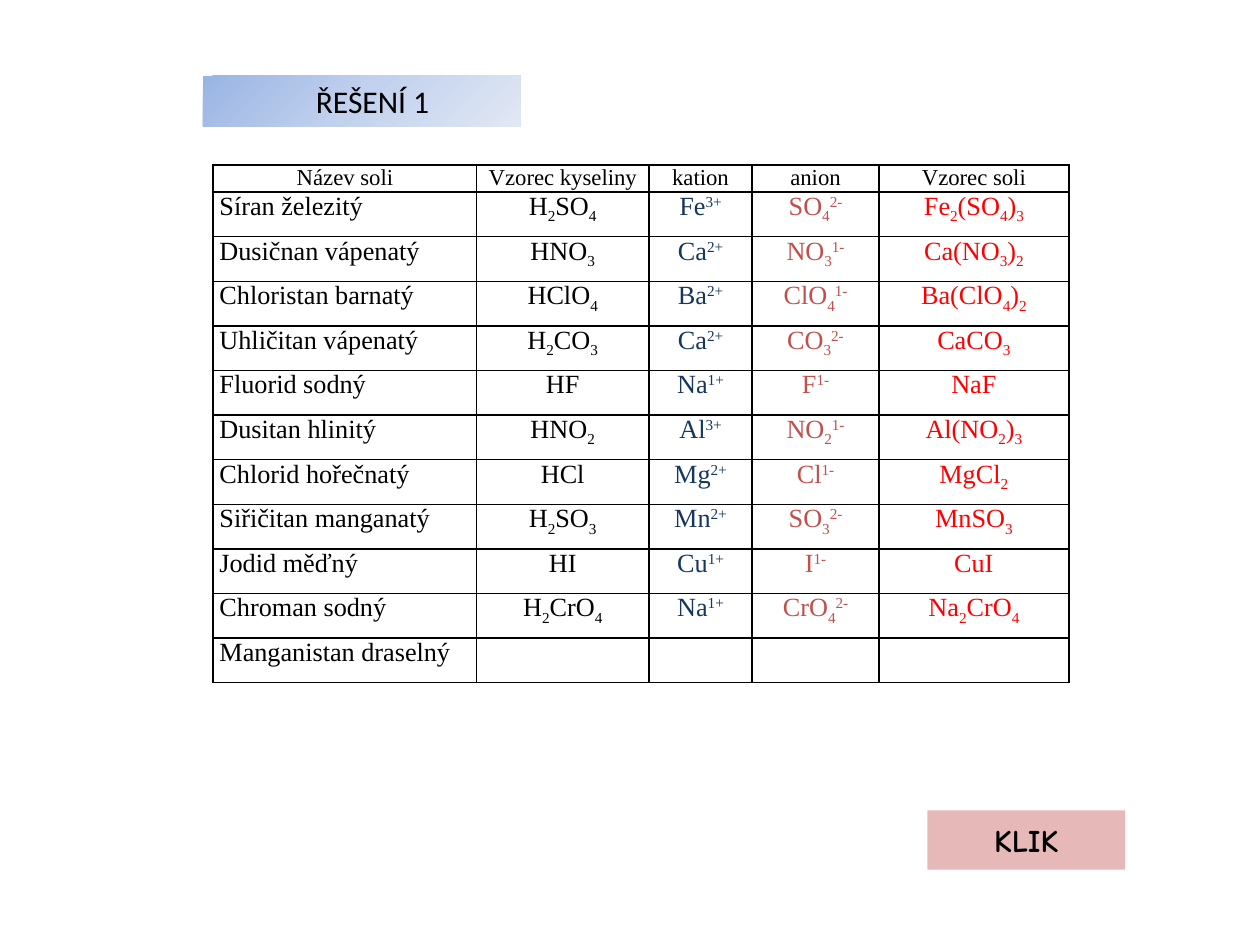
from copy import deepcopy
from dataclasses import dataclass
from itertools import groupby

from lxml import etree
from pptx import Presentation
from pptx.dml.color import RGBColor
from pptx.enum import shapes, text
from pptx.oxml import ns
from pptx.util import Pt


@dataclass(frozen=True)
class Theme:
    black: str = "000000"
    cation: str = "17365D"
    anion: str = "C0504D"
    salt: str = "FF0000"
    fade: tuple = ("9AB5E4", "C2D1ED", "E1E8F5")
    button: str = "E6B9B8"
    serif: str = "Times New Roman"
    sans: str = "Calibri"
    comic: str = "Comic Neue"
    head: int = 13
    body: int = 15
    large: int = 18


THEME = Theme()
SUB, SUPER = -25000, 30000
HEADS = ["Název soli", "Vzorec kyseliny", "kation", "anion", "Vzorec soli"]
# In formulas digits are subscripts; the part after ^ is the charge.
SALTS = [
    ["Síran železitý", "H2SO4", "Fe^3+", "SO4^2-", "Fe2(SO4)3"],
    ["Dusičnan vápenatý", "HNO3", "Ca^2+", "NO3^1-", "Ca(NO3)2"],
    ["Chloristan barnatý", "HClO4", "Ba^2+", "ClO4^1-", "Ba(ClO4)2"],
    ["Uhličitan vápenatý", "H2CO3", "Ca^2+", "CO3^2-", "CaCO3"],
    ["Fluorid sodný", "HF", "Na^1+", "F^1-", "NaF"],
    ["Dusitan hlinitý", "HNO2", "Al^3+", "NO2^1-", "Al(NO2)3"],
    ["Chlorid hořečnatý", "HCl", "Mg^2+", "Cl^1-", "MgCl2"],
    ["Siřičitan manganatý", "H2SO3", "Mn^2+", "SO3^2-", "MnSO3"],
    ["Jodid měďný", "HI", "Cu^1+", "I^1-", "CuI"],
    ["Chroman sodný", "H2CrO4", "Na^1+", "CrO4^2-", "Na2CrO4"],
    ["Manganistan draselný", "", "", "", ""],
]
WIDTHS = [150.5, 98.5, 59, 72.5, 108.5]
HEAD_ROW, BODY_ROW = 15.5, 25.5


def style(para, face, size, color, align, bold=False):
    para.alignment = align
    font = para.font
    font.name, font.size, font.bold = face, Pt(size), bold
    font.color.rgb = RGBColor.from_string(color)


def add_run(para, words, shift=0):
    run = para.add_run()
    run.text = words
    if shift:
        run.font._element.set("baseline", str(shift))


def add_formula(para, code):
    base, _, charge = code.partition("^")
    for digit, chars in groupby(base, str.isdigit):
        add_run(para, "".join(chars), SUB if digit else 0)
    if charge:
        add_run(para, charge, SUPER)


def frame(cell):
    """Give the cell a thin black border and no fill."""
    props = cell._tc.get_or_add_tcPr()
    for side in ("lnL", "lnR", "lnT", "lnB"):
        line = etree.SubElement(props, ns.qn(f"a:{side}"), w=str(Pt(1)))
        fill = etree.SubElement(line, ns.qn("a:solidFill"))
        etree.SubElement(fill, ns.qn("a:srgbClr"), val=THEME.black)
    cell.fill.background()


def add_title(slide, box):
    title = slide.shapes.title
    title.left, title.top, title.width, title.height = map(Pt, box)
    fill = title.fill
    fill.gradient()
    fill.gradient_angle = 315
    stops = title._element.xpath(".//a:gsLst")[0]
    stops.insert(1, deepcopy(stops[0]))
    for i, (stop, color) in enumerate(zip(fill.gradient_stops, THEME.fade)):
        stop.position = i / 2
        stop.color.rgb = RGBColor.from_string(color)
    body = title.text_frame
    body.text = "ŘEŠENÍ 1"
    body.margin_left = Pt(64.5)
    body.vertical_anchor = text.MSO_ANCHOR.MIDDLE
    style(body.paragraphs[0], THEME.sans, THEME.large, THEME.black,
          text.PP_ALIGN.LEFT)


def add_salts(slide, left, top):
    rows = [HEADS] + SALTS
    heights = [HEAD_ROW] + [BODY_ROW] * len(SALTS)
    table = slide.shapes.add_table(
        len(rows), len(WIDTHS), Pt(left), Pt(top),
        Pt(sum(WIDTHS)), Pt(sum(heights))).table
    table.first_row = table.horz_banding = False
    for col, width in zip(table.columns, WIDTHS):
        col.width = Pt(width)
    for row, height in zip(table.rows, heights):
        row.height = Pt(height)
    colors = [THEME.black, THEME.black, THEME.cation, THEME.anion, THEME.salt]
    for r, row in enumerate(rows):
        for c, code in enumerate(row):
            cell = table.cell(r, c)
            cell.margin_left = cell.margin_right = Pt(3.6)
            cell.margin_top = cell.margin_bottom = 0
            frame(cell)
            para = cell.text_frame.paragraphs[0]
            style(para, THEME.serif, THEME.body if r else THEME.head,
                  colors[c] if r else THEME.black,
                  text.PP_ALIGN.LEFT if r and not c else text.PP_ALIGN.CENTER)
            add_formula(para, code)


def add_button(slide, box):
    shape = slide.shapes.add_shape(
        shapes.MSO_SHAPE.RECTANGLE, *map(Pt, box))
    shape.shadow.inherit = False
    shape.fill.solid()
    shape.fill.fore_color.rgb = RGBColor.from_string(THEME.button)
    shape.line.fill.background()
    body = shape.text_frame
    body.text = "KLIK"
    body.vertical_anchor = text.MSO_ANCHOR.MIDDLE
    style(body.paragraphs[0], THEME.comic, THEME.large, THEME.black,
          text.PP_ALIGN.CENTER, bold=True)


def main():
    deck = Presentation()
    deck.slide_width, deck.slide_height = Pt(720), Pt(540)
    slide = deck.slides.add_slide(deck.slide_layouts.get_by_name("Title Only"))
    add_title(slide, (116, 43.2, 181.5, 29))
    add_salts(slide, 121.8, 94.3)
    add_button(slide, (530, 463, 113, 34))
    deck.save("out.pptx")


if __name__ == "__main__":
    main()
